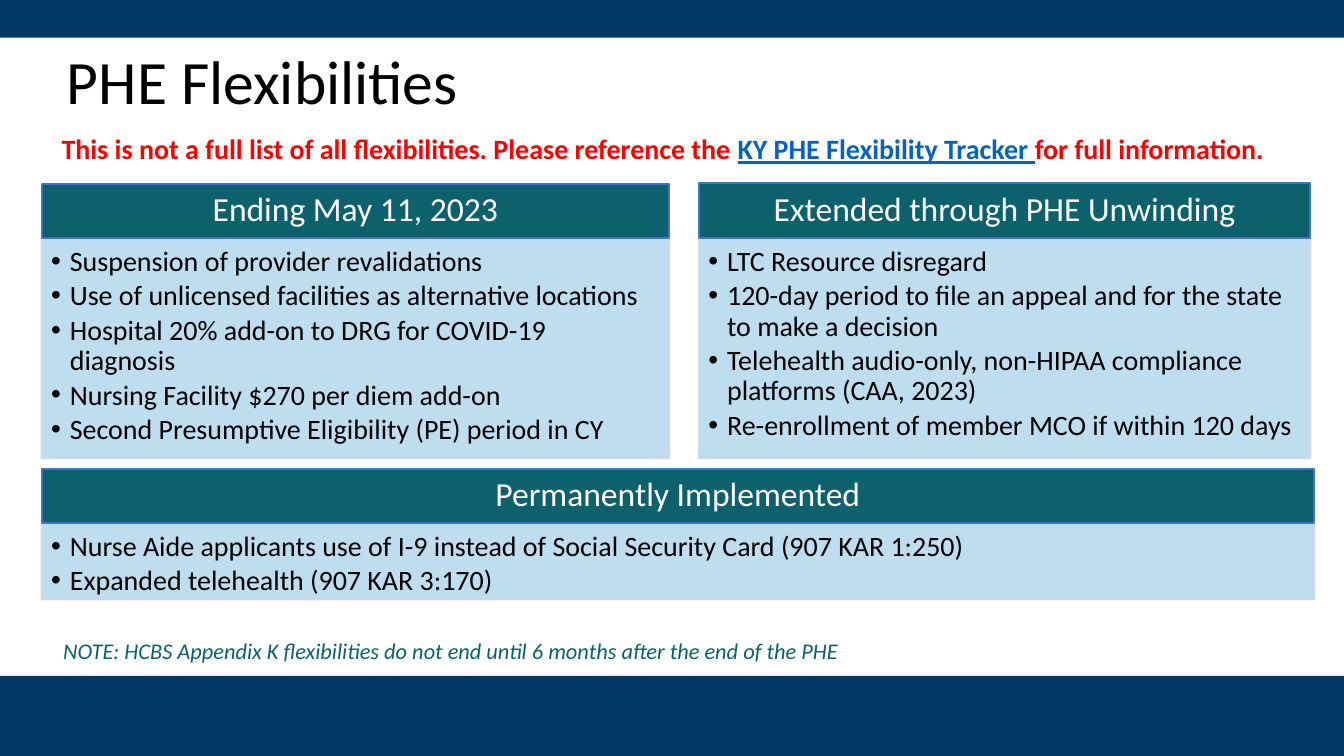
from dataclasses import dataclass

from lxml.etree import SubElement
from pptx import Presentation
from pptx.dml.color import RGBColor
from pptx.enum.shapes import MSO_SHAPE
from pptx.enum.text import MSO_ANCHOR as Anchor, PP_ALIGN as Align
from pptx.oxml.ns import qn
from pptx.util import Inches, Pt

NAVY = RGBColor(0x00, 0x38, 0x65)
TEAL = RGBColor(0x0D, 0x61, 0x6C)
PALE_BLUE = RGBColor(0xB7, 0xDB, 0xEF)
HEADER_EDGE = RGBColor(0x44, 0x72, 0xC4)
BODY_EDGE = RGBColor(0xCF, 0xD5, 0xEA)
RED = RGBColor(0xFF, 0x00, 0x00)
LINK_BLUE = RGBColor(0x05, 0x63, 0xC1)
BLACK = RGBColor(0x00, 0x00, 0x00)
WHITE = RGBColor(0xFF, 0xFF, 0xFF)

FONT = "Calibri"
SLIDE_W = 10
SLIDE_H = SLIDE_W * 9 / 16
FOOTER_TOP = 5.03
INDENT = 0.14
DEFAULT_INSETS = (0.1, 0.05, 0.1, 0.05)


@dataclass(frozen=True)
class Panel:
    heading: str
    items: tuple[str, ...]
    left: float
    top: float
    width: float
    body_top: float
    body_height: float


PANELS = (
    Panel("Ending May 11, 2023", (
        "Suspension of provider revalidations",
        "Use of unlicensed facilities as alternative locations",
        "Hospital 20% add-on to DRG for COVID-19 diagnosis",
        "Nursing Facility $270 per diem add-on",
        "Second Presumptive Eligibility (PE) period in CY",
    ), 0.31, 1.37, 4.67, 1.77, 1.64),
    Panel("Extended through PHE Unwinding", (
        "LTC Resource disregard",
        "120-day period to file an appeal and for the state to make a decision",
        "Telehealth audio-only, non-HIPAA compliance platforms (CAA, 2023)",
        "Re-enrollment of member MCO if within 120 days",
    ), 5.2, 1.36, 4.55, 1.77, 1.64),
    Panel("Permanently Implemented", (
        "Nurse Aide applicants use of I-9 instead of Social Security Card (907 KAR 1:250)",
        "Expanded telehealth (907 KAR 3:170)",
    ), 0.31, 3.49, 9.47, 3.89, 0.57),
)


def add_text(paragraph, text: str, *, size: float, color: RGBColor,
             bold=False, italic=False, underline=False) -> None:
    run = paragraph.add_run()
    run.text = text
    font = run.font
    font.name, font.size = FONT, Pt(size)
    font.bold, font.italic, font.underline = bold, italic, underline
    font.color.rgb = color


def set_frame(shape, insets=DEFAULT_INSETS, anchor=Anchor.TOP):
    """Prepare a shape's text frame and return it."""
    frame = shape.text_frame
    frame.word_wrap = True
    frame.vertical_anchor = anchor
    (frame.margin_left, frame.margin_top,
     frame.margin_right, frame.margin_bottom) = map(Inches, insets)
    return frame


def add_text_box(slide, left: float, top: float, width: float, height: float, **frame_format):
    """Add a text box and return its first paragraph."""
    box = slide.shapes.add_textbox(*map(Inches, (left, top, width, height)))
    return set_frame(box, **frame_format).paragraphs[0]


def add_block(slide, left: float, top: float, width: float, height: float,
              fill: RGBColor, edge: RGBColor | None = None):
    block = slide.shapes.add_shape(
        MSO_SHAPE.RECTANGLE, *map(Inches, (left, top, width, height)))
    block.shadow.inherit = False
    block.fill.solid()
    block.fill.fore_color.rgb = fill
    if edge is None:
        block.line.fill.background()
    else:
        block.line.color.rgb = edge
        block.line.width = Pt(1)
    return block


def set_opacity(shape, percent: int) -> None:
    """Apply one opacity to both fill and outline."""
    for color in shape._element.spPr.iter(qn("a:srgbClr")):
        SubElement(color, qn("a:alpha"), val=str(percent * 1000))


def make_bullet(paragraph) -> None:
    properties = paragraph._p.get_or_add_pPr()
    properties.set("marL", str(Inches(INDENT)))
    properties.set("indent", str(-Inches(INDENT)))
    SubElement(properties, qn("a:buFont"), typeface="Arial")
    SubElement(properties, qn("a:buChar"), char="•")


def draw_panel(slide, panel: Panel) -> None:
    body = add_block(slide, panel.left, panel.body_top, panel.width,
                     panel.body_height, PALE_BLUE, BODY_EDGE)
    set_opacity(body, 90)
    frame = set_frame(body, insets=(0.07, 0.07, 0.1, 0.11))
    for index, item in enumerate(panel.items):
        paragraph = frame.add_paragraph() if index else frame.paragraphs[0]
        make_bullet(paragraph)
        paragraph.alignment = Align.LEFT
        paragraph.line_spacing = 0.9
        paragraph.space_after = Pt(2.25)
        add_text(paragraph, item, size=15, color=BLACK)

    header = add_block(slide, panel.left, panel.top, panel.width,
                       panel.body_top - panel.top, TEAL, HEADER_EDGE)
    heading = set_frame(header, insets=(0.14, 0.08, 0.14, 0.08),
                        anchor=Anchor.MIDDLE).paragraphs[0]
    heading.alignment = Align.CENTER
    heading.line_spacing = 0.9
    add_text(heading, panel.heading, size=18, color=WHITE)


def main() -> None:
    deck = Presentation()
    deck.slide_width, deck.slide_height = Inches(SLIDE_W), Inches(SLIDE_H)
    slide = deck.slides.add_slide(deck.slide_layouts[6])

    add_block(slide, 0, 0, SLIDE_W, 0.28, NAVY)
    add_block(slide, 0, FOOTER_TOP, SLIDE_W, SLIDE_H - FOOTER_TOP, NAVY)

    title = add_text_box(slide, 0.4, 0.33, 8.62, 1.09)
    title.line_spacing = 0.9
    add_text(title, "PHE Flexibilities", size=33, color=BLACK)

    note = add_text_box(slide, 0.4, 4.62, 9.11, 0.44,
                        insets=(0.07, 0.04, 0.07, 0.04), anchor=Anchor.MIDDLE)
    add_text(note, "NOTE: HCBS Appendix K flexibilities do not end until 6 months "
             "after the end of the PHE", size=12, color=TEAL, italic=True)

    notice = add_text_box(slide, 0.19, 0.93, 9.53, 0.35)
    notice.alignment = Align.CENTER
    add_text(notice, "This is not a full list of all flexibilities. Please reference the ",
             size=15, color=RED, bold=True)
    add_text(notice, "KY PHE Flexibility Tracker ",
             size=15, color=LINK_BLUE, bold=True, underline=True)
    add_text(notice, "for full information. ", size=15, color=RED, bold=True)

    for panel in PANELS:
        draw_panel(slide, panel)

    deck.save("out.pptx")


if __name__ == "__main__":
    main()
